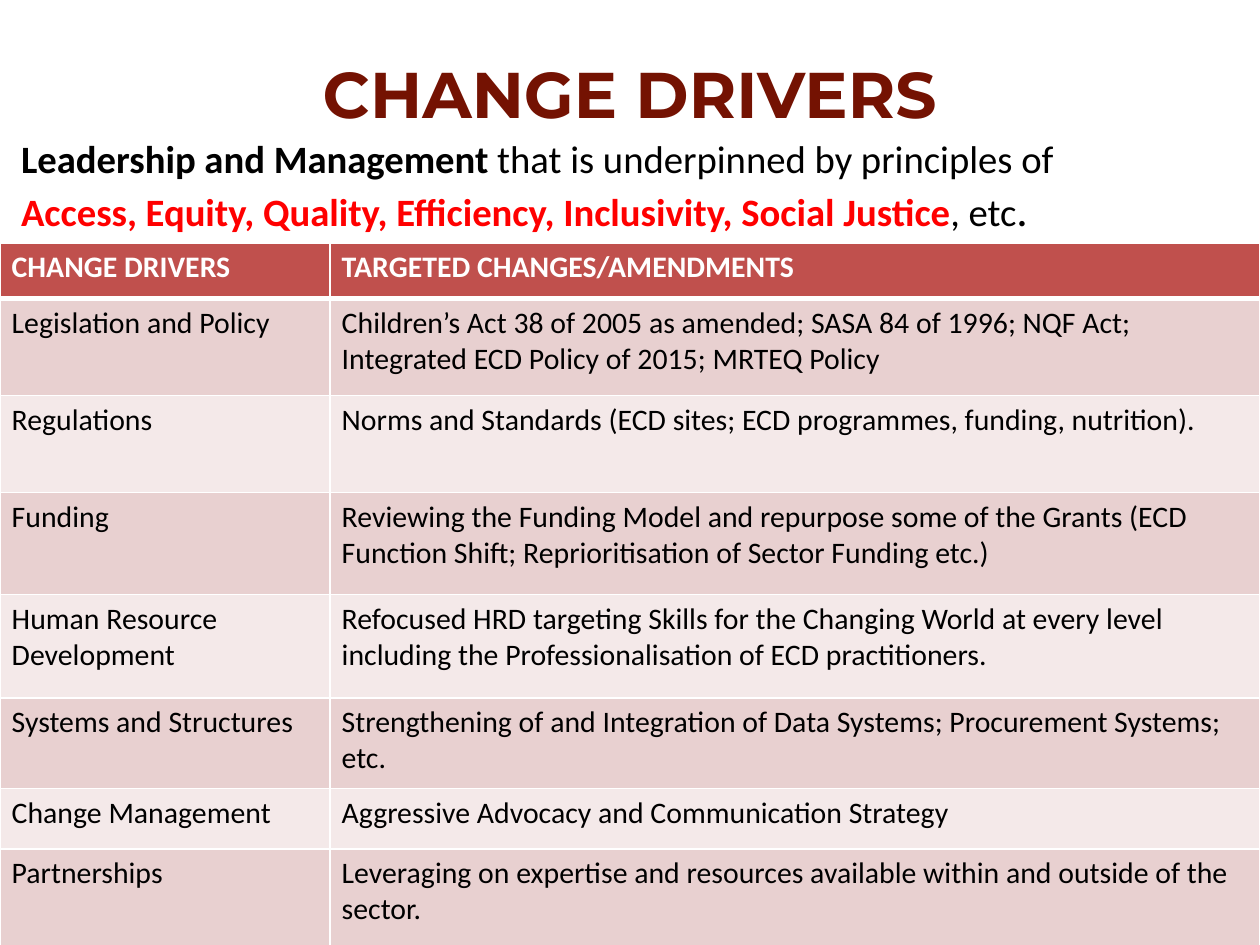
from lxml.etree import SubElement
from pptx import Presentation
from pptx.dml.color import RGBColor
from pptx.enum.text import MSO_ANCHOR, PP_ALIGN
from pptx.oxml.ns import qn
from pptx.util import Pt

COLOURS = {
    "title": "741202",
    "text": "000000",
    "accent": "FF0000",
    "white": "FFFFFF",
    "header": "C0504D",
    "odd": "E8D0D0",
    "even": "F4E9E9",
}

INTRO = [
    [
        ("Leadership and Management", {"bold": True}),
        (" that is underpinned by principles of", {}),
    ],
    [
        (
            "Access, Equity, Quality, Efficiency, Inclusivity, Social Justice",
            {"bold": True, "colour": "accent"},
        ),
        (", etc", {}),
        (".", {"size": 25.9}),
    ],
]

ROWS = [
    (31.7, "CHANGE DRIVERS", "TARGETED CHANGES/AMENDMENTS"),
    (55.4, "Legislation and Policy",
     "Children’s Act 38 of 2005 as amended; SASA 84 of 1996; NQF Act; "
     "Integrated ECD Policy of 2015; MRTEQ Policy"),
    (55.4, "Regulations",
     "Norms and Standards (ECD sites; ECD programmes, funding, nutrition)."),
    (58.3, "Funding",
     "Reviewing the Funding Model and repurpose some of the Grants "
     "(ECD Function Shift; Reprioritisation of Sector Funding etc.)"),
    (59, "Human Resource Development",
     "Refocused HRD targeting Skills for the Changing World at every level "
     "including the Professionalisation of ECD practitioners."),
    (51.8, "Systems and Structures",
     "Strengthening of and Integration of Data Systems; Procurement Systems; etc."),
    (34.6, "Change Management", "Aggressive Advocacy and Communication Strategy"),
    (55.4, "Partnerships",
     "Leveraging on expertise and resources available within and outside of the sector."),
]


def add_text(para, text, size=22.1, font="Calibri", colour="text", bold=False):
    span = para.add_run()
    span.text = text
    span.font.size = Pt(size)
    span.font.name = font
    span.font.bold = bold
    span.font.color.rgb = RGBColor.from_string(COLOURS[colour])


class SlideBuilder:
    def __init__(self, page):
        self.page = page

    def text_box(self, left, top, width, height, paragraphs,
                 align=PP_ALIGN.LEFT, anchor=MSO_ANCHOR.TOP):
        box = self.page.shapes.add_textbox(Pt(left), Pt(top), Pt(width), Pt(height))
        frame = box.text_frame
        frame.word_wrap = True
        frame.vertical_anchor = anchor
        for index, spans in enumerate(paragraphs):
            para = frame.add_paragraph() if index else frame.paragraphs[0]
            para.alignment = align
            for text, style in spans:
                add_text(para, text, **style)

    def border(self, cell, bottom):
        properties = cell._tc.get_or_add_tcPr()
        widths = {"a:lnL": 1, "a:lnR": 1, "a:lnT": 1, "a:lnB": bottom}
        for tag, width in widths.items():
            line = SubElement(properties, qn(tag), w=str(Pt(width)))
            fill = SubElement(line, qn("a:solidFill"))
            SubElement(fill, qn("a:srgbClr"), val=COLOURS["white"])

    def table(self, left, top, widths, rows):
        heights = [row[0] for row in rows]
        table = self.page.shapes.add_table(
            len(rows), len(widths), Pt(left), Pt(top), Pt(sum(widths)), Pt(sum(heights))
        ).table
        for column, width in zip(table.columns, widths):
            column.width = Pt(width)
        for index, (height, *texts) in enumerate(rows):
            table.rows[index].height = Pt(height)
            header = index == 0
            fill = "header" if header else ("odd" if index % 2 else "even")
            for cell, text in zip(table.rows[index].cells, texts):
                cell.margin_left = cell.margin_right = Pt(6.7)
                self.border(cell, 3 if header else 1)
                cell.fill.solid()
                cell.fill.fore_color.rgb = RGBColor.from_string(COLOURS[fill])
                add_text(cell.text_frame.paragraphs[0], text, size=17,
                         colour="white" if header else "text", bold=header)


def main():
    deck = Presentation()
    deck.slide_width, deck.slide_height = Pt(720), Pt(540)
    builder = SlideBuilder(deck.slides.add_slide(deck.slide_layouts[6]))
    title_style = {"size": 36.9, "font": "Montserrat", "colour": "title", "bold": True}
    builder.text_box(0, 32.4, 720, 41, [[("CHANGE DRIVERS", title_style)]],
                     PP_ALIGN.CENTER, MSO_ANCHOR.MIDDLE)
    builder.table(0, 139, [188.6, 531.4], ROWS)
    builder.text_box(5, 73.4, 710.6, 65.5, INTRO)
    deck.save("out.pptx")


if __name__ == "__main__":
    main()
